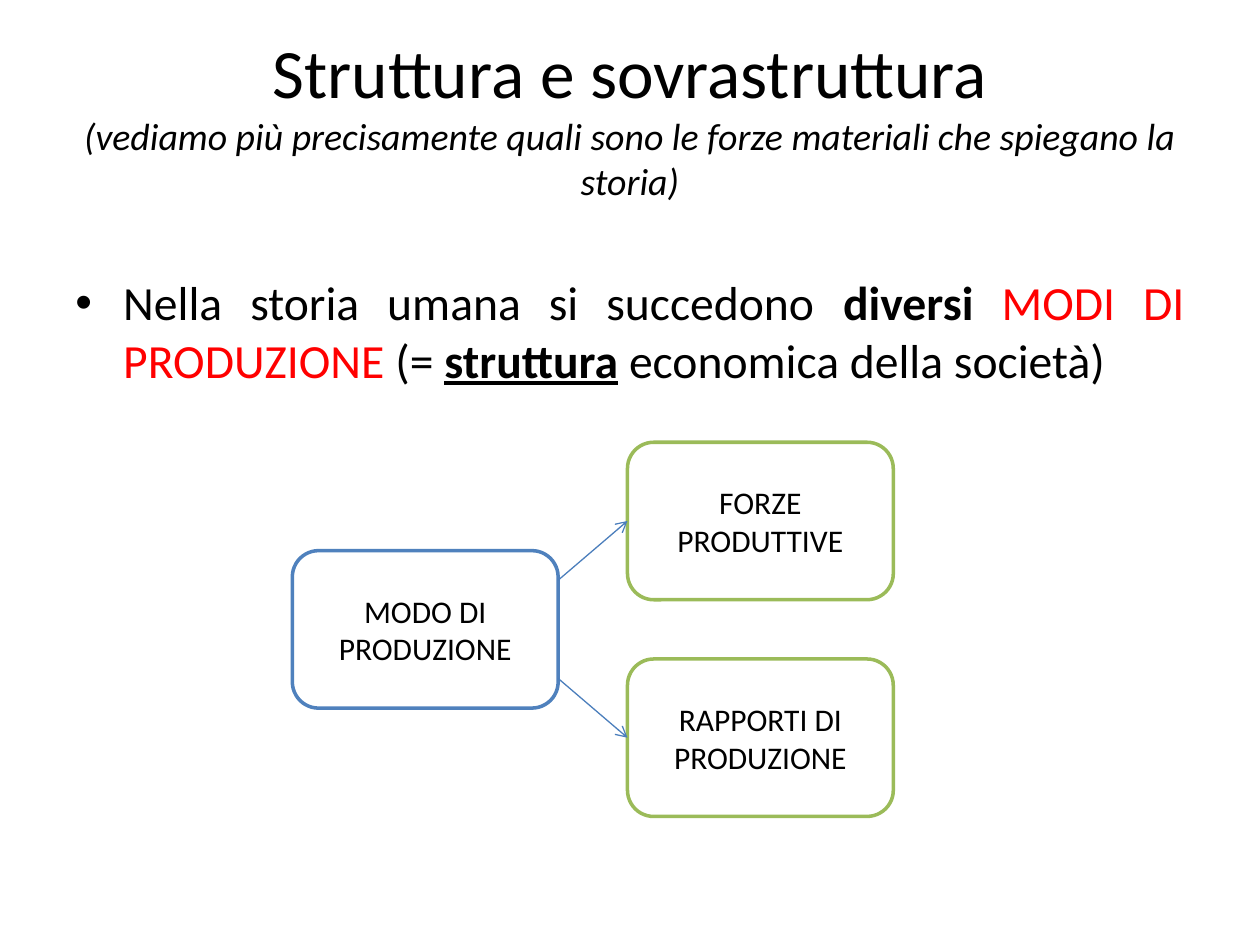
import pptx
import pptx.dml.color
import pptx.enum.shapes
import pptx.enum.text
import pptx.oxml
import pptx.oxml.ns
import pptx.util
from pptx.util import Inches

COLORS = {
    "text": "000000",
    "accent": "FF0000",
    "box": "FFFFFF",
    "mode": "4F81BD",
    "factor": "9BBB59",
    "arrow": "4B7EBC",
}
ALIGN = pptx.enum.text.PP_ALIGN
ANCHOR = pptx.enum.text.MSO_ANCHOR
BOX_WIDTH, BOX_HEIGHT = 2.11, 1.25


def rgb(name):
    """Return the named palette colour."""
    return pptx.dml.color.RGBColor.from_string(COLORS[name])


def add_run(paragraph, text, size=18, color="text", bold=False, italic=False, underline=False):
    """Append formatted text to a paragraph."""
    run = paragraph.add_run()
    run.text = text
    font = run.font
    font.name = "Calibri"
    font.size = pptx.util.Pt(size)
    font.color.rgb = rgb(color)
    font.bold, font.italic, font.underline = bold, italic, underline


def add_text_area(slide, left, top, width, height, align, anchor):
    """Add a wrapping text box and return its first paragraph."""
    area = slide.shapes.add_textbox(Inches(left), Inches(top), Inches(width), Inches(height))
    area.text_frame.word_wrap = True
    area.text_frame.vertical_anchor = anchor
    paragraph = area.text_frame.paragraphs[0]
    paragraph.alignment = align
    return paragraph


def add_bullet(paragraph, indent):
    """Give a paragraph a hanging round bullet."""
    properties = paragraph._p.get_or_add_pPr()
    properties.set("marL", str(Inches(indent)))
    properties.set("indent", str(-Inches(indent)))
    namespace = pptx.oxml.ns.nsdecls("a")
    properties.append(pptx.oxml.parse_xml(f'<a:buFont {namespace} typeface="Arial"/>'))
    properties.append(pptx.oxml.parse_xml(f'<a:buChar {namespace} char="•"/>'))


def add_box(slide, left, top, label, outline):
    """Add a rounded concept box with a centred label."""
    box = slide.shapes.add_shape(
        pptx.enum.shapes.MSO_SHAPE.ROUNDED_RECTANGLE,
        Inches(left), Inches(top), Inches(BOX_WIDTH), Inches(BOX_HEIGHT))
    box.shadow.inherit = False
    box.fill.solid()
    box.fill.fore_color.rgb = rgb("box")
    box.line.color.rgb = rgb(outline)
    box.line.width = pptx.util.Pt(2)
    box.text_frame.word_wrap = True
    box.text_frame.vertical_anchor = ANCHOR.MIDDLE
    paragraph = box.text_frame.paragraphs[0]
    paragraph.alignment = ALIGN.CENTER
    add_run(paragraph, label)


def add_arrow(slide, start, end):
    """Add a thin straight arrow between two points."""
    arrow = slide.shapes.add_connector(
        pptx.enum.shapes.MSO_CONNECTOR.STRAIGHT, *map(Inches, start + end))
    arrow.line.color.rgb = rgb("arrow")
    arrow.line.width = pptx.util.Pt(0.75)
    namespace = pptx.oxml.ns.nsdecls("a")
    arrow.line._get_or_add_ln().append(
        pptx.oxml.parse_xml(f'<a:tailEnd {namespace} type="arrow"/>'))
    arrow._element.spPr.append(pptx.oxml.parse_xml(f"<a:effectLst {namespace}/>"))


def add_title(slide):
    """Add the heading and its italic subtitle."""
    heading = add_text_area(slide, 0.5, 0.3, 9, 1.25, ALIGN.CENTER, ANCHOR.MIDDLE)
    add_run(heading, "Struttura e sovrastruttura", size=39.6)
    heading.add_line_break()
    add_run(heading, "(vediamo più precisamente quali sono le forze materiali "
            "che spiegano la storia)", size=21.6, italic=True)


def add_statement(slide):
    """Add the bulleted statement on modes of production."""
    statement = add_text_area(slide, 0.5, 2.12, 9, 1.01, ALIGN.JUSTIFY, ANCHOR.TOP)
    add_bullet(statement, 0.38)
    for text, style in (
        ("Nella storia umana si succedono ", {}),
        ("diversi ", {"bold": True}),
        ("MODI DI PRODUZIONE", {"color": "accent"}),
        (" (= ", {}),
        ("struttura", {"bold": True, "underline": True}),
        (" economica della società)", {}),
    ):
        add_run(statement, text, size=27.2, **style)


def add_diagram(slide):
    """Add the mode of production and the two factors it leads to."""
    mode_left, mode_top, factor_left = 2.32, 4.37, 4.98
    middle = mode_top + BOX_HEIGHT / 2
    add_box(slide, mode_left, mode_top, "MODO DI PRODUZIONE", "mode")
    for side, label in ((-1, "FORZE PRODUTTIVE"), (1, "RAPPORTI DI PRODUZIONE")):
        add_box(slide, factor_left, mode_top + side * 0.86, label, "factor")
        add_arrow(slide, (mode_left + BOX_WIDTH, middle + side * 0.39),
                  (factor_left, middle + side * 0.86))


def main():
    """Build and save the slide."""
    presentation = pptx.Presentation()
    presentation.slide_width, presentation.slide_height = Inches(10), Inches(7.5)
    slide = presentation.slides.add_slide(presentation.slide_layouts[6])
    add_title(slide)
    add_statement(slide)
    add_diagram(slide)
    presentation.save("out.pptx")


if __name__ == "__main__":
    main()
